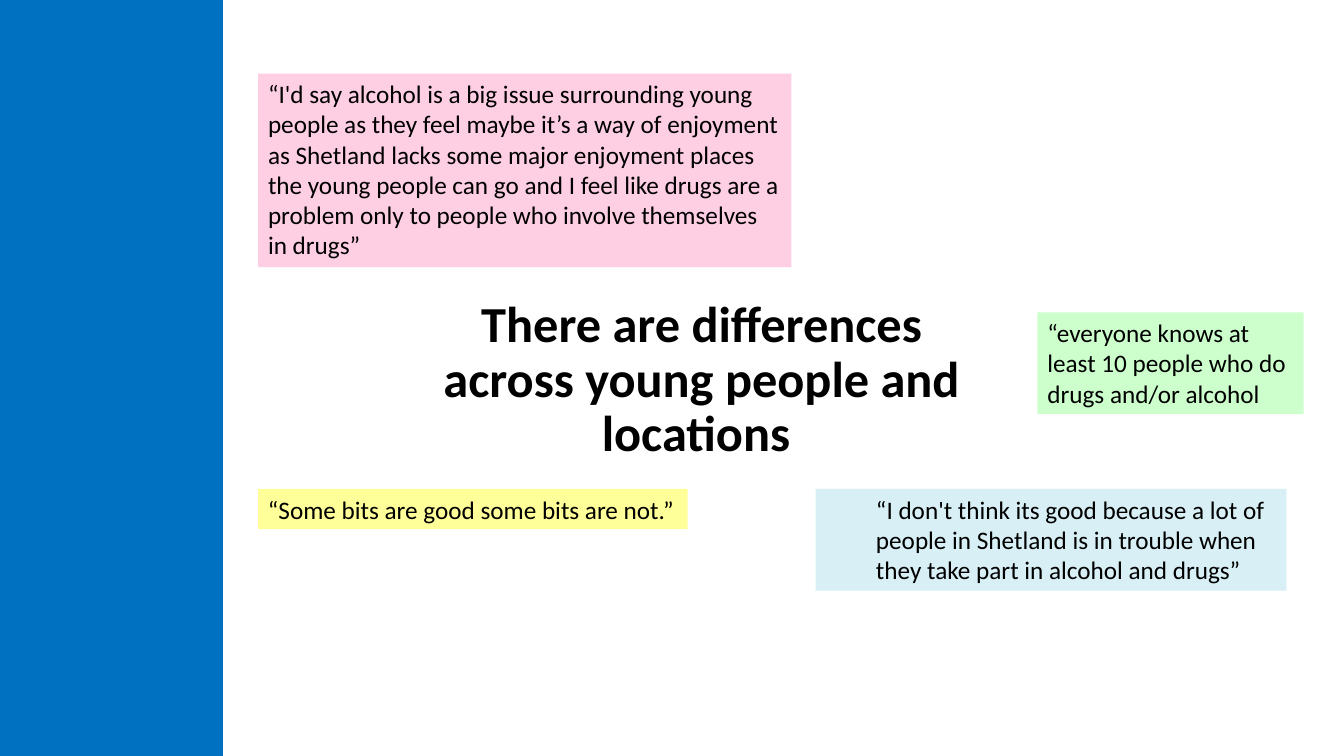
from dataclasses import dataclass

from pptx import Presentation
from pptx.dml.color import RGBColor
from pptx.enum.shapes import MSO_SHAPE
from pptx.enum.text import MSO_ANCHOR, MSO_AUTO_SIZE, PP_ALIGN
from pptx.util import Inches, Pt


@dataclass(frozen=True)
class Theme:
    font: str = "Calibri"
    ink: str = "000000"
    paper: str = "FFFFFF"
    blue: str = "0070C0"
    pink: str = "FECEE3"
    yellow: str = "FFFF99"
    sky: str = "D7EFF5"
    green: str = "CCFFCC"
    head: int = 36
    body: int = 18


THEME = Theme()

QUOTES = [
    ((2.56, 0.73, 5.29, 1.92), THEME.pink, 0,
     "“I'd say alcohol is a big issue surrounding young people as they feel "
     "maybe it’s a way of enjoyment as Shetland lacks some major enjoyment "
     "places the young people can go and I feel like drugs are a problem only "
     "to people who involve themselves in drugs”"),
    ((2.56, 4.85, 4.26, 0.4), THEME.yellow, 0,
     "“Some bits are good some bits are not.”"),
    ((8.09, 4.85, 4.67, 1.01), THEME.sky, 0.5,
     "“I don't think its good because a lot of people in Shetland is in "
     "trouble when they take part in alcohol and drugs”"),
    ((10.29, 3.1, 2.64, 1.01), THEME.green, 0,
     "“everyone knows at least 10 people who do drugs and/or alcohol"),
]


def paint(shape, color):
    shape.fill.solid()
    shape.fill.fore_color.rgb = RGBColor.from_string(color)


def add_band(slide, box):
    band = slide.shapes.add_shape(MSO_SHAPE.RECTANGLE, *map(Inches, box))
    band.shadow.inherit = False
    paint(band, THEME.blue)
    band.line.color.rgb = RGBColor.from_string(THEME.blue)
    band.line.width = Pt(1)


def add_text(slide, box, color, text, size):
    label = slide.shapes.add_textbox(*map(Inches, box))
    paint(label, color)
    frame = label.text_frame
    frame.word_wrap = True
    frame.vertical_anchor = MSO_ANCHOR.TOP
    para = frame.paragraphs[0]
    para.text = text
    para.font.name = THEME.font
    para.font.size = Pt(size)
    para.font.color.rgb = RGBColor.from_string(THEME.ink)
    return frame


def add_head(slide, box, text):
    frame = add_text(slide, box, THEME.paper, text, THEME.head)
    para = frame.paragraphs[0]
    para.font.bold = True
    para.alignment = PP_ALIGN.CENTER
    para.line_spacing = 0.9
    para.space_before = Pt(10)


def add_quote(slide, box, color, indent, text):
    frame = add_text(slide, box, color, text, THEME.body)
    frame.auto_size = MSO_AUTO_SIZE.SHAPE_TO_FIT_TEXT
    if indent:
        props = frame.paragraphs[0]._p.get_or_add_pPr()
        props.set("marL", str(Inches(indent)))


def main():
    deck = Presentation()
    deck.slide_width = Inches(13.33)
    deck.slide_height = Inches(7.5)
    slide = deck.slides.add_slide(deck.slide_layouts[6])
    add_band(slide, (0, 0, 2.21, 7.5))
    add_head(slide, (4.02, 2.92, 5.88, 1.38),
             "There are differences across young people and locations ")
    for quote in QUOTES:
        add_quote(slide, *quote)
    deck.save("out.pptx")


if __name__ == "__main__":
    main()
